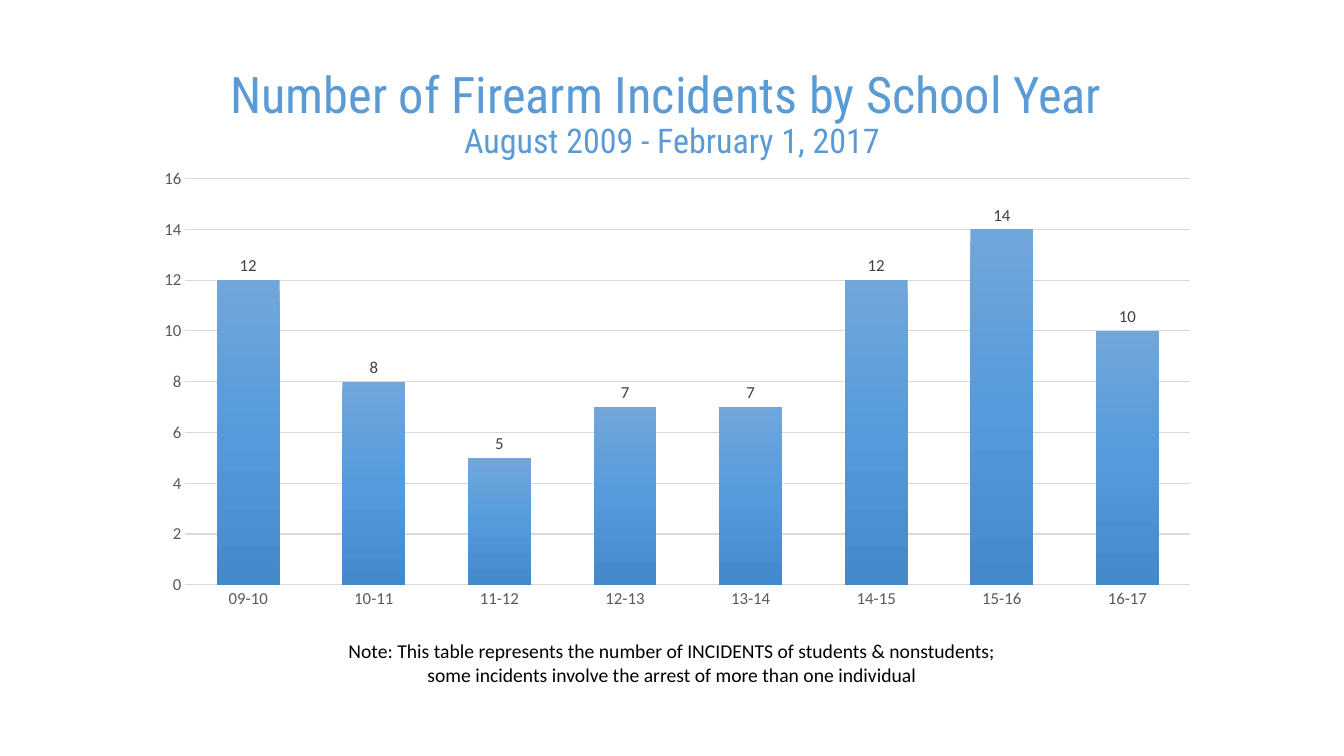
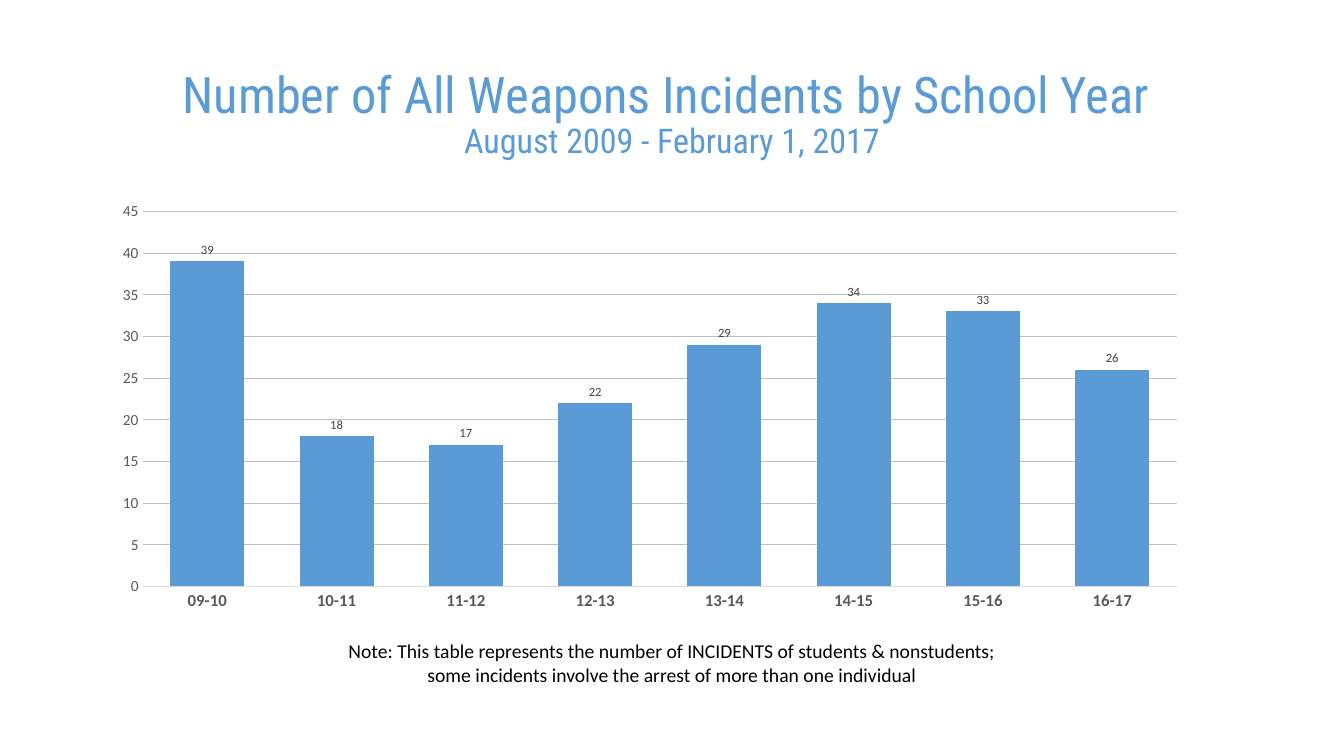
from dataclasses import dataclass

from pptx import Presentation
from pptx.chart.data import CategoryChartData
from pptx.dml.color import RGBColor
from pptx.enum.chart import XL_CHART_TYPE as ChartType
from pptx.enum.chart import XL_LABEL_POSITION as LabelPos
from pptx.enum.chart import XL_TICK_MARK as Tick
from pptx.enum.text import MSO_ANCHOR as Anchor
from pptx.enum.text import PP_ALIGN as Align
from pptx.oxml import parse_xml
from pptx.oxml.ns import nsdecls
from pptx.util import Inches, Pt

WIDTH, HEIGHT = Inches(13.33), Inches(7.5)
TITLE_FONT, BODY_FONT = "Roboto Condensed", "Calibri"
BLUE, BLACK, AXIS_GRAY, LABEL_GRAY, LIGHT_GRAY = "5B9BD5", "000000", "595959", "404040", "D9D9D9"
BAR_GRADIENT = ((0, "71A6DB"), (50, "559BDB"), (100, "448ACA"))
YEARS = [f"{y:02}-{y + 1}" for y in range(9, 17)]
PERIOD = "August 2009 - February 1, 2017"
NOTE = ("Note: This table represents the number of INCIDENTS of students & nonstudents; "
        "some incidents involve the arrest of more than one individual")


@dataclass(frozen=True)
class Box:
    """Position and size in percent of the slide."""
    left: float
    top: float
    width: float
    height: float

    def emu(self) -> tuple[int, int, int, int]:
        return (int(WIDTH * self.left / 100), int(HEIGHT * self.top / 100),
                int(WIDTH * self.width / 100), int(HEIGHT * self.height / 100))


@dataclass(frozen=True)
class IncidentChart:
    title: str
    box: Box
    values: tuple[int, ...]
    top_value: int
    step: int
    gap: int
    overlap: int = 0
    grid: str = LIGHT_GRAY
    base_width: float = 0.75
    year_bold: bool = False
    value_size: int = 12
    label_size: int = 12
    gradient: tuple[tuple[int, str], ...] = ()
    plot: tuple[float, ...] = ()


TITLE_BOX = Box(7.5, 9.33, 85, 11.87)
NOTE_BOX = Box(24.46, 83.87, 51.09, 7.6)

CHARTS = (
    IncidentChart("Number of Firearm Incidents by School Year ", Box(10.65, 21.2, 78.7, 60.4),
                  (12, 8, 5, 7, 7, 12, 14, 10), top_value=16, step=2, gap=100, overlap=-24,
                  base_width=1, gradient=BAR_GRADIENT, plot=(0.04, 0.04, 0.95, 0.89)),
    IncidentChart("Number of All Weapons Incidents by School Year ", Box(7.5, 25.6, 81.7, 56.27),
                  (39, 18, 17, 22, 29, 34, 33, 26), top_value=45, step=5, gap=75,
                  grid="BFBFBF", year_bold=True, value_size=11, label_size=9),
)


def rgb(color: str) -> RGBColor:
    return RGBColor.from_string(color)


def style_font(font, size: float, color: str, name: str = BODY_FONT, bold: bool = False) -> None:
    font.size, font.name, font.bold = Pt(size), name, bold
    font.color.rgb = rgb(color)


def add_text(s, text: str, box: Box, *, sizes: tuple[float, ...], color: str = BLACK,
             font: str = BODY_FONT, anchor: Anchor = Anchor.TOP, spacing: float = 1.0) -> None:
    tf = s.shapes.add_textbox(*box.emu()).text_frame
    tf.word_wrap, tf.vertical_anchor = True, anchor
    p = tf.paragraphs[0]
    p.alignment, p.line_spacing = Align.CENTER, spacing
    for i, (line, size) in enumerate(zip(text.split("\n"), sizes)):
        if i:
            p.add_line_break()
        r = p.add_run()
        r.text = line
        style_font(r.font, size, color, font)


def fill_gradient(series, stops: tuple[tuple[int, str], ...]) -> None:
    gs = "".join(f'<a:gs pos="{pos * 1000}"><a:srgbClr val="{color}"/></a:gs>'
                 for pos, color in stops)
    series._element.get_or_add_spPr().insert(0, parse_xml(
        f'<a:gradFill {nsdecls("a")} rotWithShape="1"><a:gsLst>{gs}</a:gsLst>'
        '<a:lin ang="5400000" scaled="0"/></a:gradFill>'))


def place_plot(chart, plot: tuple[float, ...]) -> None:
    area = chart._chartSpace.chart.plotArea
    for old in area.xpath("c:layout"):
        area.remove(old)
    sides = "".join(f'<c:{k} val="{v}"/>' for k, v in zip("xywh", plot))
    area.insert(0, parse_xml(
        f'<c:layout {nsdecls("c")}><c:manualLayout><c:layoutTarget val="inner"/>'
        f'<c:xMode val="edge"/><c:yMode val="edge"/>{sides}</c:manualLayout></c:layout>'))


def style_axes(chart, spec_: IncidentChart) -> None:
    years, counts = chart.category_axis, chart.value_axis
    for axis in (years, counts):
        axis.major_tick_mark = axis.minor_tick_mark = Tick.NONE
    style_font(years.tick_labels.font, 12, AXIS_GRAY, bold=spec_.year_bold)
    style_font(counts.tick_labels.font, spec_.value_size, AXIS_GRAY)
    counts.minimum_scale, counts.maximum_scale = 0, spec_.top_value
    counts.major_unit = spec_.step
    counts.format.line.fill.background()
    grid = counts.major_gridlines.format.line
    for line, color, width in ((years.format.line, LIGHT_GRAY, spec_.base_width),
                               (grid, spec_.grid, 0.75)):
        line.color.rgb, line.width = rgb(color), Pt(width)


def add_incident_chart(s, item: IncidentChart) -> None:
    data = CategoryChartData()
    data.categories = YEARS
    data.add_series("Series 1", item.values)
    chart = s.shapes.add_chart(ChartType.COLUMN_CLUSTERED, *item.box.emu(), data).chart
    chart.has_legend = chart.has_title = False
    style_font(chart.font, 10, BLACK)
    style_axes(chart, item)
    plot = chart.plots[0]
    plot.gap_width, plot.overlap, plot.vary_by_categories = item.gap, item.overlap, False
    series = plot.series[0]
    if item.gradient:
        fill_gradient(series, item.gradient)
    else:
        series.format.fill.solid()
        series.format.fill.fore_color.rgb = rgb(BLUE)
    labels = series.data_labels
    labels.show_value, labels.position = True, LabelPos.OUTSIDE_END
    style_font(labels.font, item.label_size, LABEL_GRAY)
    if item.plot:
        place_plot(chart, item.plot)


def main() -> None:
    prs = Presentation()
    prs.slide_width, prs.slide_height = WIDTH, HEIGHT
    for item in CHARTS:
        s = prs.slides.add_slide(prs.slide_layouts[6])
        add_text(s, f"{item.title}\n{PERIOD}", TITLE_BOX, sizes=(36, 24.3), color=BLUE,
                 font=TITLE_FONT, anchor=Anchor.MIDDLE, spacing=0.9)
        add_incident_chart(s, item)
        add_text(s, NOTE, NOTE_BOX, sizes=(14,))
    prs.save("out.pptx")


if __name__ == "__main__":
    main()
